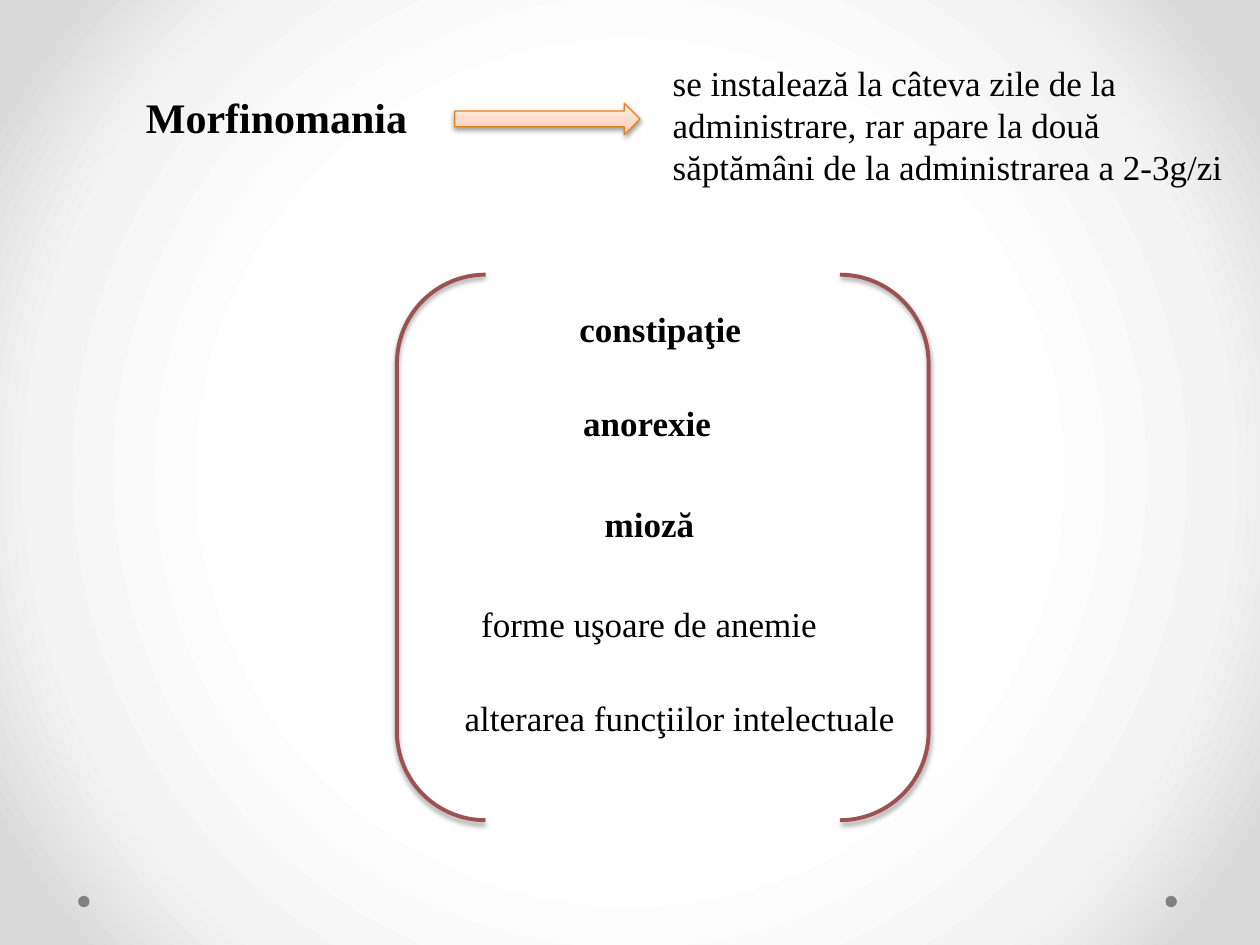
from lxml import etree
from pptx import Presentation
from pptx.dml.color import RGBColor
from pptx.enum.shapes import MSO_SHAPE
from pptx.enum.text import MSO_AUTO_SIZE
from pptx.oxml import parse_xml
from pptx.util import Inches, Pt

OVAL = MSO_SHAPE.OVAL
RIGHT_ARROW = MSO_SHAPE.RIGHT_ARROW
BRACKETS = MSO_SHAPE.DOUBLE_BRACKET
FIT_SHAPE = MSO_AUTO_SIZE.SHAPE_TO_FIT_TEXT

NS = "http://schemas.openxmlformats.org/drawingml/2006/main"
FONT = "Times New Roman"
COLORS = {
    "text": "000000", "dot": "808080", "arrow": "E6811C", "bracket": "9C5252",
    "center": "FFFFFF", "ring": "F4F4F4", "edge": "DADADA",
    "peach": "FFC9B1", "light peach": "FFD8C8", "pale peach": "FFF0EA",
}

prs = Presentation()
prs.slide_width, prs.slide_height = Inches(10), Inches(7.5)
slide = prs.slides.add_slide(prs.slide_layouts[6])


def area(left, top, width, height):
    """Turn percentages of the slide's width and height into lengths."""
    across, down = prs.slide_width / 100, prs.slide_height / 100
    return [round(v) for v in (left * across, top * down, width * across, height * down)]


def set_gradient(properties, stops, direction):
    """Replace the solid fill of the properties element by a gradient."""
    stop_list = "".join(
        f'<a:gs pos="{share * 1000}"><a:srgbClr val="{COLORS[name]}"/></a:gs>'
        for share, name in stops)
    gradient = parse_xml(f'<a:gradFill xmlns:a="{NS}" rotWithShape="1">'
                         f'<a:gsLst>{stop_list}</a:gsLst>{direction}</a:gradFill>')
    solid = properties.find(f"{{{NS}}}solidFill")
    properties.replace(solid, gradient)


# Background: white centre fading to grey corners
backdrop = slide.background.fill
backdrop.solid()
set_gradient(slide.element.cSld.bg.bgPr,
             [(50, "center"), (76, "ring"), (92, "edge")],
             '<a:path path="circle"><a:fillToRect l="50000" t="50000" '
             'r="50000" b="50000"/></a:path>')

# Footer dots
for left in (6.2, 92.5):
    dot = slide.shapes.add_shape(OVAL, *area(left, 94.8, 0.9, 1.2))
    dot.shadow.inherit = False
    dot.fill.solid()
    dot.fill.fore_color.rgb = RGBColor.from_string(COLORS["dot"])
    dot.line.fill.background()

# Arrow from the term to its onset, and brackets around the symptoms
arrow = slide.shapes.add_shape(RIGHT_ARROW, *area(36.1, 10.93, 14.7, 3.33))
arrow.fill.solid()
set_gradient(arrow.element.spPr,
             [(0, "peach"), (35, "light peach"), (100, "pale peach")],
             '<a:lin ang="16200000" scaled="1"/>')
brackets = slide.shapes.add_shape(BRACKETS, *area(31.5, 29.07, 42.2, 57.73))
brackets.fill.background()

for outline, color, weight in ((arrow, "arrow", 0.75), (brackets, "bracket", 2.25)):
    outline.line.color.rgb = RGBColor.from_string(COLORS[color])
    outline.line.width = Pt(weight)
    outline.shadow.inherit = False
    effects = outline.element.spPr.find(f"{{{NS}}}effectLst")
    shadow = etree.SubElement(effects, f"{{{NS}}}outerShdw", blurRad=str(Pt(3.1)),
                              dist=str(Pt(1.6)), dir="5400000", rotWithShape="0")
    shade = etree.SubElement(shadow, f"{{{NS}}}srgbClr", val=COLORS["text"])
    etree.SubElement(shade, f"{{{NS}}}alpha", val="38000")

# Texts: wording, left, top, width, height, size, bold, wrap
ROW = 5.87
texts = [
    ("Morfinomania", 10.6, 9.07, 23, 6.67, 24, True, False),
    ("se instalează la câteva zile de la administrare, rar apare la două "
     "săptămâni de la administrarea a 2-3g/zi", 52.4, 5.87, 46.5, 14.8, 20, False, True),
    ("constipaţie", 45, 31.87, 14.9, ROW, 20, True, False),
    ("anorexie", 45.3, 41.87, 12.2, ROW, 20, True, False),
    ("mioză", 47, 52.53, 9.2, ROW, 20, True, False),
    ("forme uşoare de anemie", 37.2, 63.07, 28.8, ROW, 20, False, False),
    ("alterarea funcţiilor intelectuale", 35.9, 73.07, 36.3, ROW, 20, False, False),
]
for wording, left, top, width, height, size, bold, wrap in texts:
    frame = slide.shapes.add_textbox(*area(left, top, width, height)).text_frame
    frame.word_wrap = wrap
    frame.auto_size = FIT_SHAPE
    run = frame.paragraphs[0].add_run()
    run.text = wording
    run.font.name = FONT
    run.font.size = Pt(size)
    run.font.bold = bold
    run.font.color.rgb = RGBColor.from_string(COLORS["text"])

prs.save("out.pptx")
